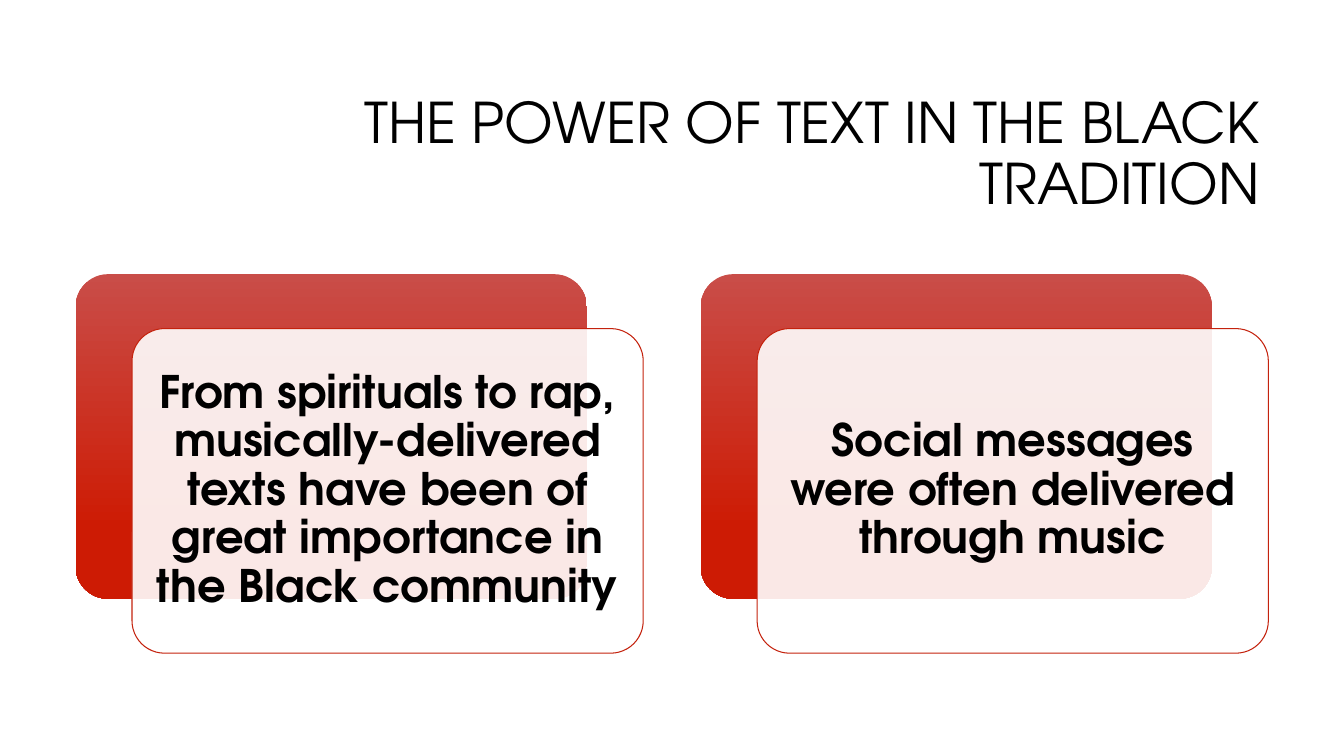
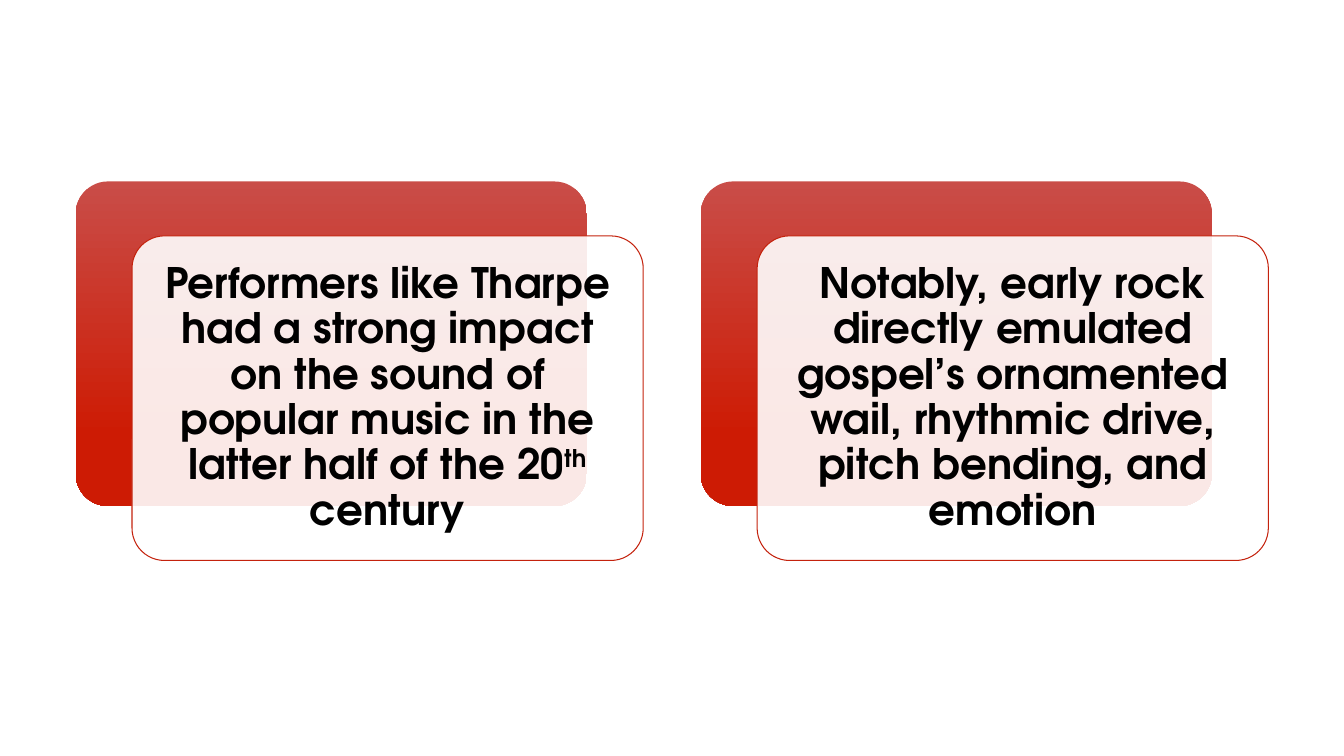
from lxml.etree import SubElement
from pptx import Presentation
from pptx.dml.color import RGBColor
from pptx.enum.shapes import MSO_SHAPE
from pptx.enum.text import MSO_ANCHOR, PP_ALIGN
from pptx.oxml.ns import qn
from pptx.util import Inches, Pt

# Shared style
FONT = "TeX Gyre Adventor"
BLACK = RGBColor(0x00, 0x00, 0x00)
WHITE = RGBColor(0xFF, 0xFF, 0xFF)
LIGHT_RED = RGBColor(0xC9, 0x4D, 0x48)
DEEP_RED = RGBColor(0xCD, 0x1B, 0x04)
OUTLINE_RED = RGBColor(0xC4, 0x22, 0x0D)

# Card geometry in inches
CARDS_LEFT = 0.75
CARD_WIDTH, CARD_HEIGHT = 5.07, 3.22
CARD_PITCH = 6.2
SHIFT_X, SHIFT_Y = 0.56, 0.54


def write_text(shape, parts, size, bold=False, align=PP_ALIGN.CENTER, inset=None):
    """Fill a shape with one paragraph; parts are (text, is_superscript) pairs."""
    frame = shape.text_frame
    frame.word_wrap = True
    frame.vertical_anchor = MSO_ANCHOR.MIDDLE
    if inset is not None:
        frame.margin_left = frame.margin_right = Inches(inset)
        frame.margin_top = frame.margin_bottom = Inches(inset)
    paragraph = frame.paragraphs[0]
    paragraph.alignment = align
    paragraph.line_spacing = 0.9
    for text, is_superscript in parts:
        run = paragraph.add_run()
        run.text = text
        run.font.name = FONT
        run.font.size = Pt(size)
        run.font.bold = bold
        run.font.color.rgb = BLACK
        if is_superscript:
            run._r.get_or_add_rPr().set("baseline", "30000")


def add_title(slide, text):
    title = slide.shapes.add_textbox(Inches(3.17), Inches(0.84), Inches(9.42), Inches(1.41))
    write_text(title, [(text, False)], 40, align=PP_ALIGN.RIGHT)


def add_rounded_panel(slide, left, top):
    panel = slide.shapes.add_shape(
        MSO_SHAPE.ROUNDED_RECTANGLE,
        Inches(left), Inches(top), Inches(CARD_WIDTH), Inches(CARD_HEIGHT),
    )
    panel.adjustments[0] = 0.1
    panel.shadow.inherit = False
    return panel


def add_card(slide, left, top, parts, size, inset):
    # Red panel behind
    backing = add_rounded_panel(slide, left, top)
    backing.line.fill.background()
    backing.fill.gradient()
    backing.fill.gradient_angle = 270
    stops = ((0, LIGHT_RED), (0.78, DEEP_RED))
    for stop, (position, color) in zip(backing.fill.gradient_stops, stops):
        stop.position = position
        stop.color.rgb = color

    # Translucent white panel with the statement
    statement = add_rounded_panel(slide, left + SHIFT_X, top + SHIFT_Y)
    statement.fill.solid()
    statement.fill.fore_color.rgb = WHITE
    white = statement._element.spPr.find(f"{qn('a:solidFill')}/{qn('a:srgbClr')}")
    SubElement(white, qn("a:alpha"), val="90000")
    statement.line.color.rgb = OUTLINE_RED
    statement.line.width = Pt(0.75)
    write_text(statement, parts, size, bold=True, inset=inset)


def add_card_slide(deck, top, statements, size, inset, title=None):
    slide = deck.slides.add_slide(deck.slide_layouts[6])
    if title:
        add_title(slide, title)
    for column, parts in enumerate(statements):
        add_card(slide, CARDS_LEFT + column * CARD_PITCH, top, parts, size, inset)


def main():
    deck = Presentation()
    deck.slide_width = Inches(13.33)
    deck.slide_height = Inches(7.5)

    # Power of text
    add_card_slide(
        deck, 2.72,
        [
            [("From spirituals to rap, musically-delivered texts have been of "
              "great importance in the Black community", False)],
            [("Social messages were often delivered through music", False)],
        ],
        size=32, inset=0.13,
        title="THE POWER OF TEXT IN THE BLACK TRADITION",
    )

    # Influence on popular music
    add_card_slide(
        deck, 1.8,
        [
            [("Performers like Tharpe had a strong impact on the sound of "
              "popular music in the latter half of the 20", False),
             ("th", True), (" century", False)],
            [("Notably, early rock directly emulated gospel’s ornamented wail, "
              "rhythmic drive, pitch bending, and emotion", False)],
        ],
        size=30, inset=0.12,
    )
    deck.save("out.pptx")


if __name__ == "__main__":
    main()
